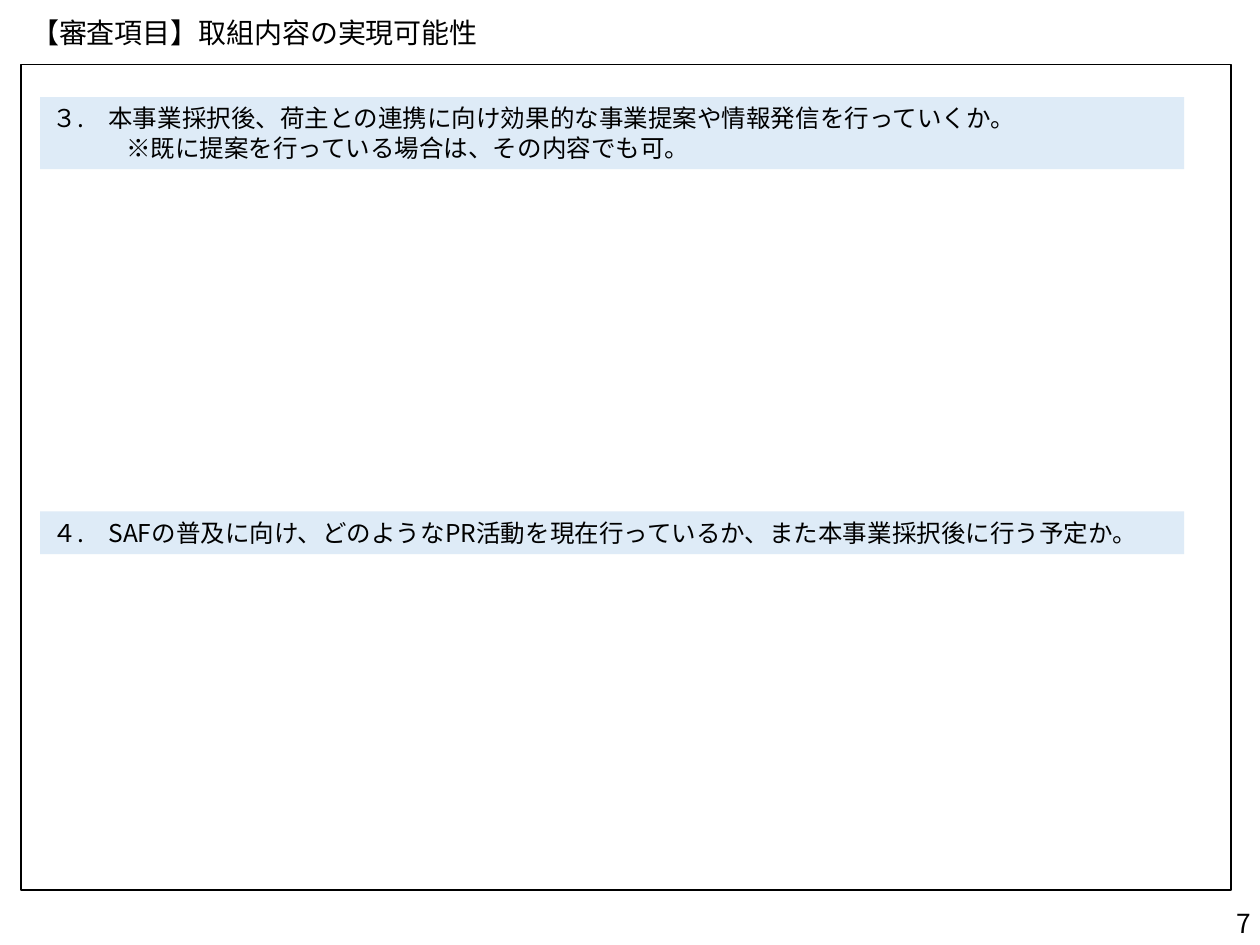
from dataclasses import dataclass

from lxml.etree import SubElement
from pptx import Presentation
from pptx.dml.color import RGBColor
from pptx.enum.shapes import MSO_SHAPE as ShapeType
from pptx.enum.text import MSO_ANCHOR as Anchor, PP_ALIGN as Align
from pptx.oxml.ns import qn
from pptx.util import Cm, Pt


@dataclass(frozen=True)
class Theme:
    font: str = "Noto Sans CJK JP"
    ink: RGBColor = RGBColor(0x00, 0x00, 0x00)
    band: RGBColor = RGBColor(0xDE, 0xEB, 0xF7)
    title_size: int = 16
    page_size: int = 15
    question_size: int = 14
    frame_width: int = 1


@dataclass(frozen=True)
class Box:
    left: float
    top: float
    width: float
    height: float

    def lengths(self) -> tuple:
        return Cm(self.left), Cm(self.top), Cm(self.width), Cm(self.height)


@dataclass(frozen=True)
class Question:
    top: float
    height: float
    text: str


THEME = Theme()
BAND_LEFT, BAND_WIDTH = 0.81, 23.06
NOTE_INDENT = 3 * Pt(THEME.question_size)
QUESTIONS = (
    Question(1.96, 1.45, "３.　本事業採択後、荷主との連携に向け効果的な事業提案や情報発信を行っていくか。\n"
                         "※既に提案を行っている場合は、その内容でも可。"),
    Question(10.31, 0.86, "４.　SAFの普及に向け、どのようなPR活動を現在行っているか、また本事業採択後に行う予定か。"),
)


def write_text(shape, text: str, size: int, align=Align.LEFT, anchor=Anchor.MIDDLE) -> None:
    frame = shape.text_frame
    frame.text = text
    frame.word_wrap = True
    frame.vertical_anchor = anchor
    for paragraph in frame.paragraphs:
        paragraph.alignment = align
        for run in paragraph.runs:
            run.font.name = THEME.font
            run.font.size = Pt(size)
            run.font.color.rgb = THEME.ink
            SubElement(run.font._element, qn("a:ea"), typeface=THEME.font)


def add_rectangle(slide, box: Box):
    shape = slide.shapes.add_shape(ShapeType.RECTANGLE, *box.lengths())
    shape.shadow.inherit = False
    return shape


def add_frame(slide) -> None:
    frame = add_rectangle(slide, Box(0.43, 1.3, 24.38, 16.64))
    frame.fill.background()
    frame.line.color.rgb = THEME.ink
    frame.line.width = Pt(THEME.frame_width)


def add_title(slide) -> None:
    title = slide.shapes.add_textbox(*Box(0.38, 0.23, 23.98, 0.94).lengths())
    write_text(title, "【審査項目】取組内容の実現可能性", THEME.title_size)
    title.text_frame.paragraphs[0].line_spacing = 0.9


def add_page_number(slide) -> None:
    number = slide.shapes.add_textbox(*Box(20.96, 18.42, 4.44, 0.38).lengths())
    write_text(number, "7", THEME.page_size, Align.RIGHT)
    frame = number.text_frame
    frame.margin_left = frame.margin_right = Cm(0.18)
    frame.margin_top = frame.margin_bottom = Cm(0.1)


def add_question(slide, question: Question) -> None:
    band = add_rectangle(slide, Box(BAND_LEFT, question.top, BAND_WIDTH, question.height))
    band.fill.solid()
    band.fill.fore_color.rgb = THEME.band
    band.line.fill.background()
    write_text(band, question.text, THEME.question_size, anchor=Anchor.TOP)
    for note in band.text_frame.paragraphs[1:]:
        note._p.get_or_add_pPr().set("marL", str(NOTE_INDENT))


def main() -> None:
    presentation = Presentation()
    presentation.slide_width, presentation.slide_height = Cm(25.4), Cm(19.05)
    slide = presentation.slides.add_slide(presentation.slide_layouts[6])
    add_page_number(slide)
    add_frame(slide)
    add_title(slide)
    for question in QUESTIONS:
        add_question(slide, question)
    presentation.save("out.pptx")


if __name__ == "__main__":
    main()
